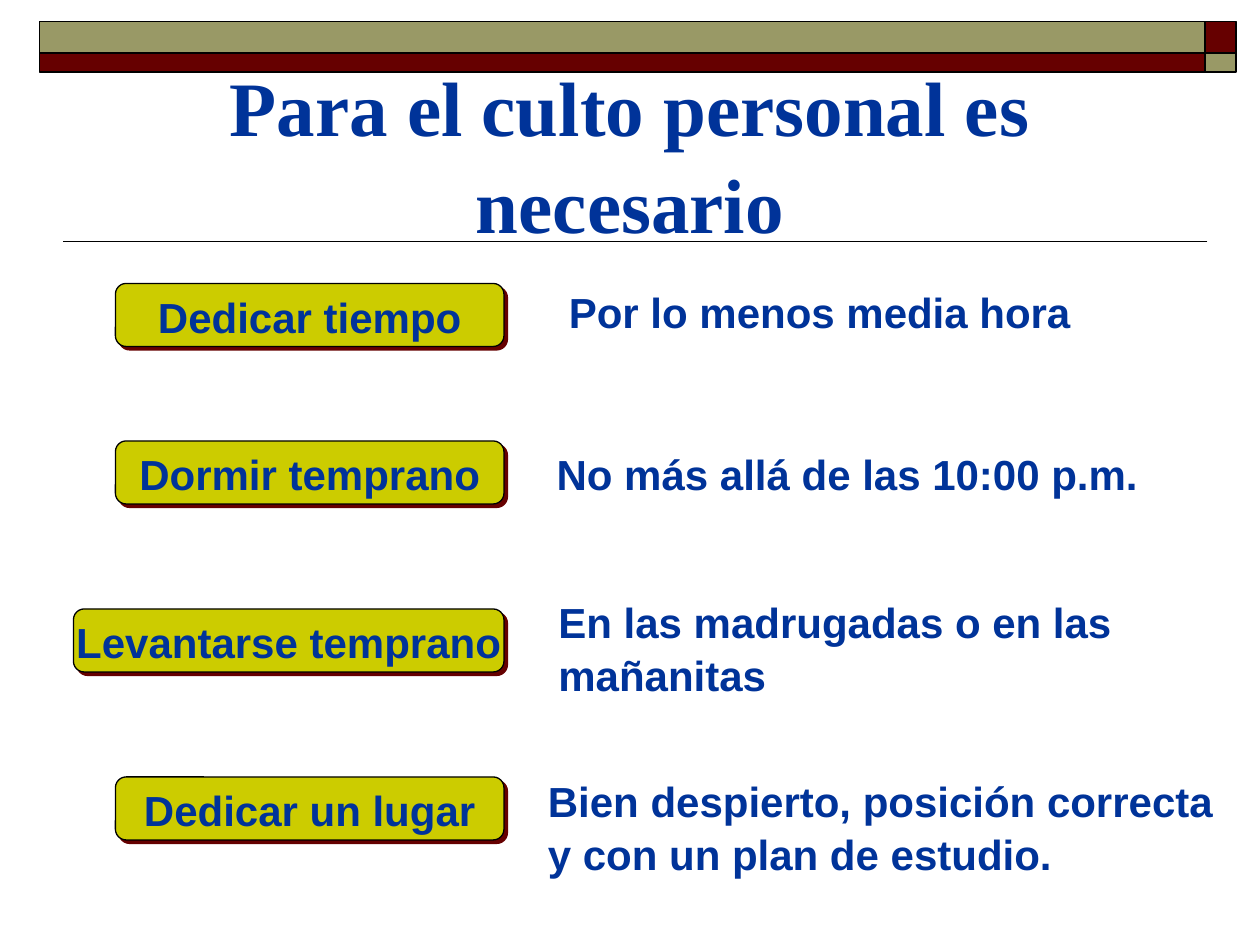
"""Build the slide on what personal worship requires."""
from lxml import etree
from pptx import Presentation
from pptx import util as u
from pptx.dml import color
from pptx.enum import shapes, text
from pptx.oxml import ns

OLIVE, MAROON, BLACK = "999966", "660000", "000000"
YELLOW, BLUE = "CCCC00", "003399"


def paint(target, hex_color):
    target.solid()
    target.fore_color.rgb = color.RGBColor.from_string(hex_color)


def write(frame, words, size, font_name, alignment):
    paragraph = frame.paragraphs[0]
    paragraph.alignment = alignment
    paragraph.line_spacing = 1.05
    run = paragraph.add_run()
    run.text = words
    run.font.size = u.Pt(size)
    run.font.name = font_name
    run.font.bold = True
    paint(run.font.fill, BLUE)


presentation = Presentation()
presentation.slide_width = u.Pt(720)
presentation.slide_height = u.Pt(540)
slide = presentation.slides.add_slide(presentation.slide_layouts[5])

rule = slide.shapes.add_connector(
    shapes.MSO_CONNECTOR.STRAIGHT, u.Pt(690), u.Pt(138), u.Pt(36), u.Pt(138))
paint(rule.line.fill, BLACK)
rule.line.width = u.Pt(1)
etree.SubElement(rule.element.spPr, ns.qn("a:effectLst"))

bands = [
    (688.5, 12.25, 18, 18, MAROON),
    (22.5, 12.25, 666, 18, OLIVE),
    (22.5, 30.25, 666, 10.75, MAROON),
    (688.5, 30.25, 18, 10.75, OLIVE),
]
for left, top, width, height, fill in bands:
    band = slide.shapes.add_shape(
        shapes.MSO_SHAPE.RECTANGLE, u.Pt(left), u.Pt(top), u.Pt(width), u.Pt(height))
    band.shadow.inherit = False
    paint(band.fill, fill)
    paint(band.line.fill, BLACK)
    band.line.width = u.Pt(1)

title = slide.shapes.title
title.left, title.top, title.width, title.height = u.Pt(36), u.Pt(42), u.Pt(648), u.Pt(90)
title.text_frame.auto_size = text.MSO_AUTO_SIZE.NONE
title.text_frame.vertical_anchor = text.MSO_ANCHOR.MIDDLE
write(title.text_frame, "Para el culto personal es necesario", 44, "Times New Roman",
      text.PP_ALIGN.CENTER)

buttons = [
    ("Dedicar tiempo", 66, 162),
    ("Dormir temprano", 66, 252),
    ("Levantarse temprano", 42, 348),
    ("Dedicar un lugar", 66, 444),
]
button_right = 288
for words, left, top in buttons:
    button = slide.shapes.add_shape(
        shapes.MSO_SHAPE.ROUNDED_RECTANGLE,
        u.Pt(left), u.Pt(top), u.Pt(button_right - left), u.Pt(36))
    button.adjustments[0] = 0.17
    paint(button.fill, YELLOW)
    paint(button.line.fill, BLACK)
    button.line.width = u.Pt(0.75)
    button.shadow.inherit = False
    effects = button.element.spPr.find(ns.qn("a:effectLst"))
    shadow = etree.SubElement(
        effects, ns.qn("a:outerShdw"), dist=str(u.Pt(2.8)), dir="2700000",
        algn="ctr", rotWithShape="0")
    etree.SubElement(shadow, ns.qn("a:srgbClr"), val=MAROON)
    button.text_frame.word_wrap = False
    button.text_frame.vertical_anchor = text.MSO_ANCHOR.MIDDLE
    write(button.text_frame, words, 24, "Arial", text.PP_ALIGN.CENTER)

details = [
    ("Por lo menos media hora", 318, 158.5, 408, 36),
    ("No más allá de las 10:00 p.m.", 311, 251.5, 403, 36.5),
    ("En las madrugadas o en las mañanitas", 312, 336, 408, 65.5),
    ("Bien despierto, posición correcta y con un plan de estudio.", 306, 438, 403, 65.5),
]
for words, left, top, width, height in details:
    detail = slide.shapes.add_textbox(u.Pt(left), u.Pt(top), u.Pt(width), u.Pt(height))
    detail.text_frame.word_wrap = True
    detail.text_frame.auto_size = text.MSO_AUTO_SIZE.SHAPE_TO_FIT_TEXT
    write(detail.text_frame, words, 24, "Arial", text.PP_ALIGN.LEFT)

presentation.save("out.pptx")
